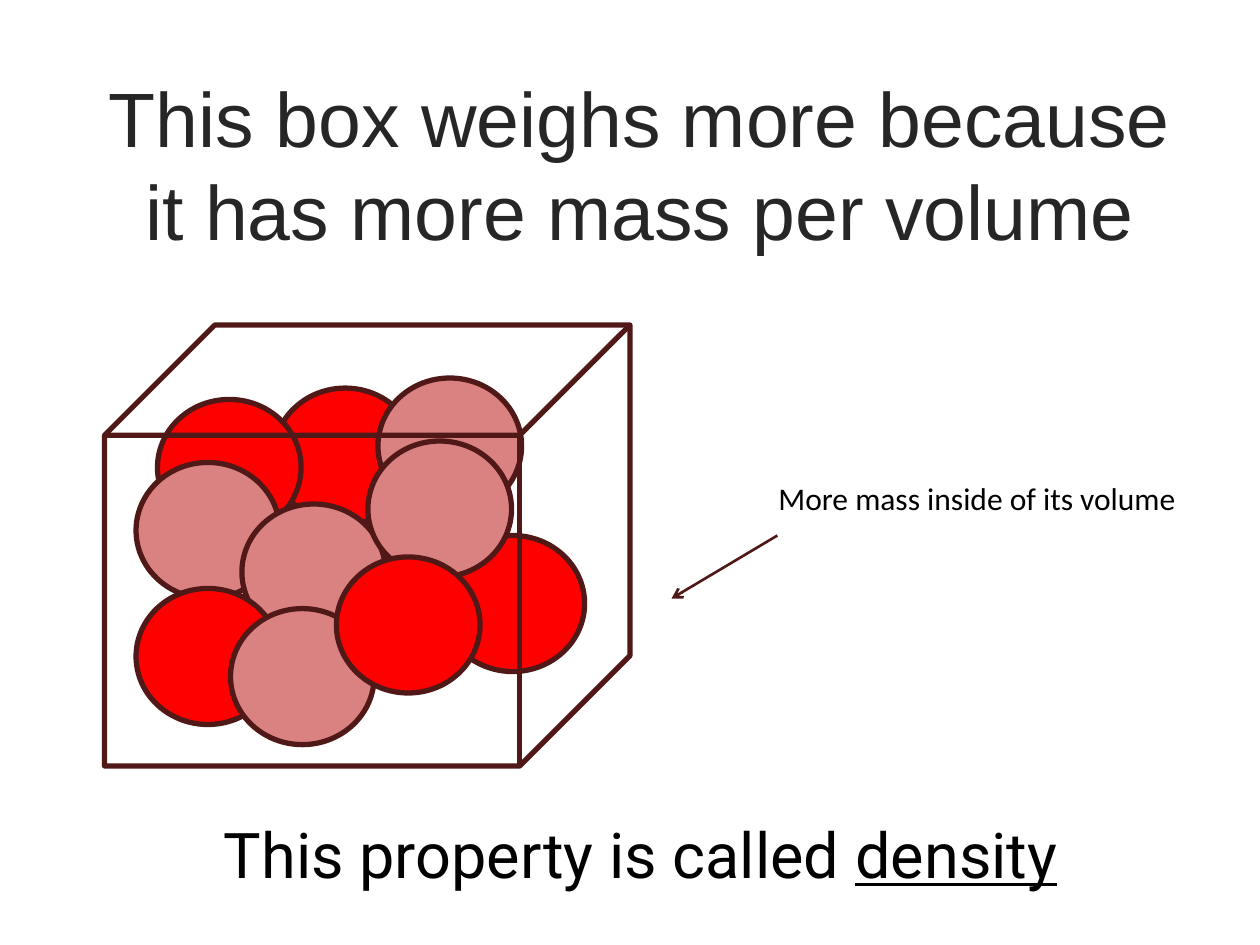
from lxml import etree
from pptx import Presentation
from pptx.dml.color import RGBColor
from pptx.enum import shapes, text
from pptx.oxml.ns import qn
from pptx.util import Inches, Pt

COLORS = {"red": "FF0000", "pink": "DA8282", "edge": "511818",
          "title": "262626", "text": "000000"}
TITLE = "This box weighs more because it has more mass per volume"
LABEL = "More mass inside of its volume"
PROPERTY = [("This property is called ", False), ("density", True)]
BALL = (1.14, 1.08)
BACK_BALLS = [(2.17, 3.08, "red"), (3.5, 4.25, "red"),
              (3, 3, "pink"), (1.25, 3.17, "red")]
FRONT_BALLS = [(1.08, 3.67, "pink"), (1.92, 4, "pink"), (1.08, 4.67, "red"),
               (1.83, 4.83, "pink"), (2.92, 3.5, "pink"), (2.67, 4.42, "red")]
BOX = (0.83, 2.58, 4.17, 3.5)


def rgb(name):
    return RGBColor.from_string(COLORS[name])


def add_solid(slide, kind, box, fill=None):
    sp = slide.shapes.add_shape(kind, *map(Inches, box))
    sp.shadow.inherit = False
    if fill:
        sp.fill.solid()
        sp.fill.fore_color.rgb = rgb(fill)
    else:
        sp.fill.background()
    sp.line.color.rgb = rgb("edge")
    sp.line.width = Pt(3)


def add_balls(slide, balls):
    for x, y, fill in balls:
        add_solid(slide, shapes.MSO_SHAPE.OVAL, (x, y, *BALL), fill)


def write(tf, runs, size, font, color, align):
    tf.word_wrap = True
    p = tf.paragraphs[0]
    p.alignment = align
    for words, underline in runs:
        r = p.add_run()
        r.text = words
        r.font.size = Pt(size)
        r.font.name = font
        r.font.color.rgb = rgb(color)
        if underline:
            r.font.underline = True


def add_arrow(slide, start, end):
    cn = slide.shapes.add_connector(shapes.MSO_CONNECTOR.STRAIGHT,
                                    *map(Inches, start + end))
    cn.line.color.rgb = rgb("edge")
    cn.line.width = Pt(1.5)
    etree.SubElement(cn.line._get_or_add_ln(), qn("a:tailEnd"), type="arrow")
    etree.SubElement(cn._element.spPr, qn("a:effectLst"))


def main():
    """Build the density slide."""
    prs = Presentation()
    prs.slide_width, prs.slide_height = Inches(10), Inches(7.5)
    slide = prs.slides.add_slide(prs.slide_layouts[5])
    center, left = text.PP_ALIGN.CENTER, text.PP_ALIGN.LEFT

    title = slide.shapes.title
    title.left, title.top, title.width, title.height = map(
        Inches, (0.58, 0.67, 9, 1.25))
    title.text_frame.vertical_anchor = text.MSO_ANCHOR.MIDDLE
    write(title.text_frame, [(TITLE, False)], 44, "Arial", "title", center)

    add_balls(slide, BACK_BALLS)
    add_solid(slide, shapes.MSO_SHAPE.CUBE, BOX)
    add_balls(slide, FRONT_BALLS)

    label = slide.shapes.add_textbox(*map(Inches, (6.08, 3.75, 3.5, 0.4)))
    write(label.text_frame, [(LABEL, False)], 18, "Calibri", "text", left)
    add_arrow(slide, (6.17, 4.25), (5.33, 4.75))
    prop = slide.shapes.add_textbox(*map(Inches, (1.25, 6.42, 7.67, 0.71)))
    write(prop.text_frame, PROPERTY, 36, "Roboto", "text", center)

    prs.save("out.pptx")


if __name__ == "__main__":
    main()
